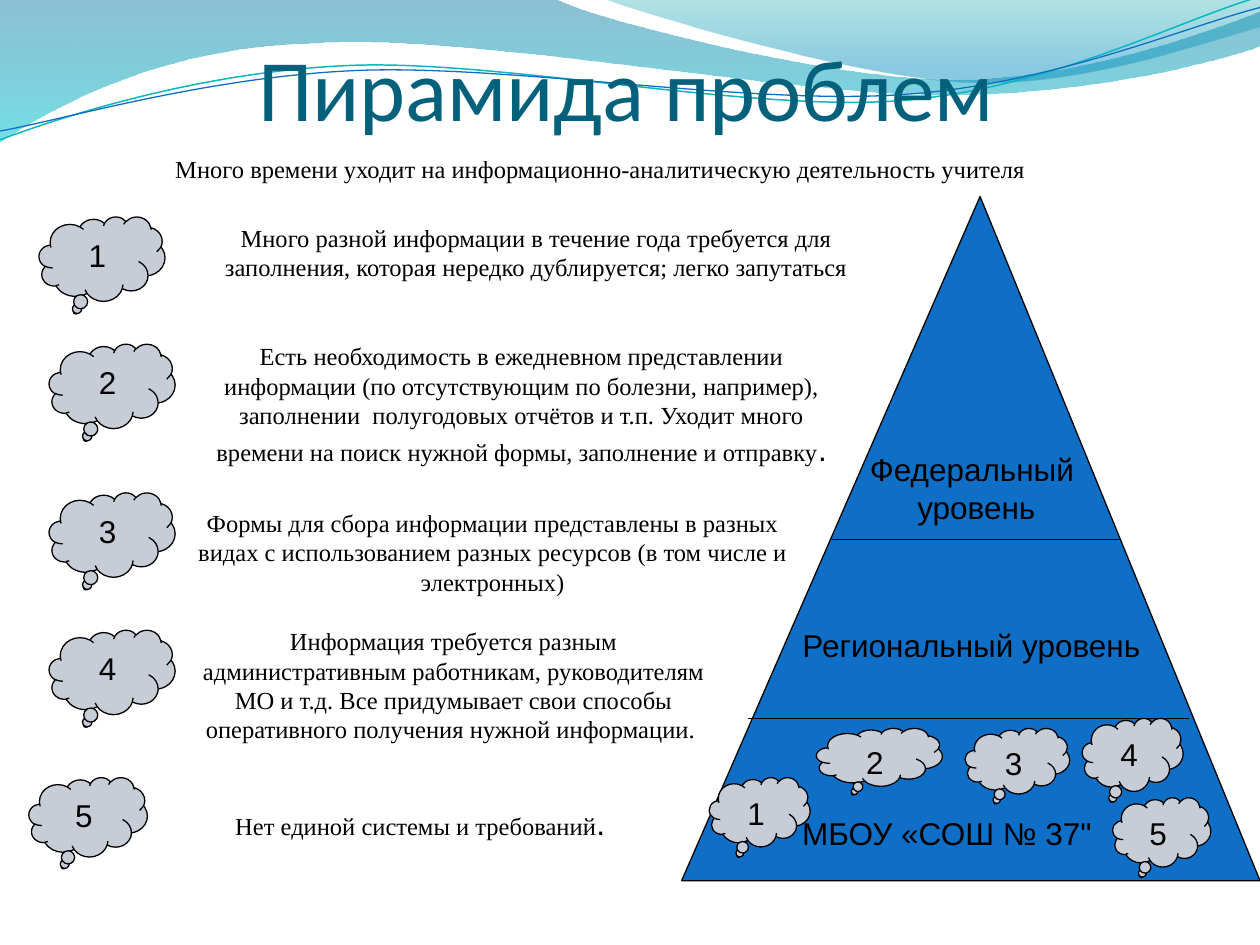
from math import cos, radians, sin

from lxml import etree
from pptx import Presentation
from pptx.dml.color import RGBColor
from pptx.enum.shapes import MSO_CONNECTOR, MSO_SHAPE
from pptx.enum.text import MSO_ANCHOR, MSO_AUTO_SIZE, PP_ALIGN
from pptx.oxml.ns import qn
from pptx.util import Inches, Pt

CLOUD = MSO_SHAPE.CLOUD_CALLOUT
PEAK = MSO_SHAPE.ISOSCELES_TRIANGLE
LINE = MSO_CONNECTOR.STRAIGHT
TOP, BOTTOM = MSO_ANCHOR.TOP, MSO_ANCHOR.BOTTOM
GROW, FIXED = MSO_AUTO_SIZE.SHAPE_TO_FIT_TEXT, MSO_AUTO_SIZE.NONE
CENTER = PP_ALIGN.CENTER

COLORS = {
    "text": "000000", "title": "04617B", "blue": "0F6FC6", "cloud": "C7CDD7",
    "teal": "0AB8BF", "deep": "0074A1", "aqua": "00C6CF",
    "sea": "00A1A9", "sky": "008BBF",
}
LABEL = {"size": Pt(18), "name": "Arial"}
NOTE = {"size": Pt(14), "name": "Times New Roman"}
HEAD = {"size": Pt(50), "name": "Calibri"}
TILT = 2.7

WAVES = [
    ([(0, 0), (4.4, -0.01), (4.76, 0.17, 6.64, 0.63, 7.58, 0.63),
      (8.53, 0.63, 9.58, 0.26, 10, 0.09), (10.01, 0.36),
      (9.83, 0.44, 8.7, 0.76, 7.46, 0.75), (6.22, 0.75, 3.82, 0.28, 2.57, 0.34),
      (1.29, 0.36, 0.46, 0.83, -0.01, 1.13), (0, 0)],
     [(0, "deep", 45), (1, "aqua", 55)]),
    ([(4.79, -0.01), (5.09, 0.11, 6.82, 0.62, 7.69, 0.65),
      (8.56, 0.69, 9.61, 0.32, 10, 0.21), (10, 0), (4.79, -0.01)],
     [(0, "sea", 30), (0.8, "sky", 45)]),
]
CURVES = [
    ([(0, 1.11), (0.48, 0.93, 1.58, 0.57, 2.77, 0.52),
      (3.95, 0.47, 5.93, 0.89, 7.13, 0.8), (8.33, 0.71, 9.38, 0.15, 9.98, -0.02)],
     (4.99, 0.57), "teal", 0.85),
    ([(0, 1.04), (0.47, 0.96, 1.64, 0.61, 2.83, 0.56),
      (4.03, 0.51, 5.97, 0.84, 7.17, 0.75), (8.36, 0.67, 9.41, 0.21, 10, 0.06)],
     (5, 0.59), "blue", 0.75),
]
LEVELS = [
    ((5.31, 6.41, 4.41, 0.4), ["МБОУ «СОШ № 37\""]),
    ((5.94, 4.92, 3.54, 0.4), ["Региональный уровень"]),
    ((5.63, 3.52, 4.17, 0.71), ["Федеральный", " уровень"]),
]
RULES = [(5.94, 9.44, 5.7), (6.6, 8.89, 4.28)]
KEYS = [(0.31, 1.72, 1, 0.67), (0.39, 2.73, 1, 0.67), (0.39, 3.91, 1, 0.67),
        (0.39, 5, 1, 0.67), (0.23, 6.17, 0.94, 0.63)]
MARKS = [(5.63, 6.17, 0.8, 0.55), (6.48, 5.78, 1, 0.46), (7.66, 5.78, 0.83, 0.52),
         (8.59, 5.7, 0.8, 0.58), (8.83, 6.33, 0.78, 0.55)]
NOTES = [
    ((1.25, 1.17, 7.03, 0.34),
     "Много времени уходит на информационно-аналитическую деятельность учителя", ""),
    ((1.48, 1.72, 5.55, 0.57),
     "Много разной информации в течение года требуется для заполнения, "
     "которая нередко дублируется; легко запутаться", ""),
    ((1.56, 2.66, 5.16, 1.11),
     "Есть необходимость в ежедневном представлении информации (по отсутствующим "
     "по болезни, например), заполнении  полугодовых отчётов и т.п. Уходит много "
     "времени на поиск нужной формы, заполнение и отправку", "."),
    ((1.41, 3.98, 5, 0.81),
     "Формы для сбора информации представлены в разных видах с использованием "
     "разных ресурсов (в том числе и электронных)", ""),
    ((1.41, 4.92, 4.38, 1.04),
     "Информация требуется разным административным работникам, руководителям МО "
     "и т.д. Все придумывает свои способы оперативного получения нужной "
     "информации. ", ""),
    ((1.48, 6.33, 3.71, 0.4), "Нет единой системы и требований", "."),
]


def tint(key):
    return RGBColor.from_string(COLORS[key])


def apply(item, values):
    for name, value in values.items():
        setattr(item, name, value)


def stroke(shape, key="text", width=0.75):
    shape.line.color.rgb = tint(key)
    shape.line.width = Pt(width)


def write(frame, lines, color="text"):
    for index, runs in enumerate(lines):
        para = frame.paragraphs[0] if index == 0 else frame.add_paragraph()
        para.alignment = CENTER
        for text, style in runs:
            run = para.add_run()
            run.text = text
            apply(run.font, style)
            run.font.color.rgb = tint(color)


def add_text(slide, box, lines, color="text", **values):
    frame = slide.shapes.add_textbox(*map(Inches, box)).text_frame
    apply(frame, {"word_wrap": True, "auto_size": GROW, **values})
    write(frame, lines, color)


def add_solid(slide, kind, box, key):
    shape = slide.shapes.add_shape(kind, *map(Inches, box))
    shape.shadow.inherit = False
    shape.fill.solid()
    shape.fill.fore_color.rgb = tint(key)
    stroke(shape)
    return shape


def add_cloud(slide, box, number):
    frame = add_solid(slide, CLOUD, box, "cloud").text_frame
    apply(frame, {"word_wrap": True, "vertical_anchor": TOP})
    write(frame, [[(str(number), LABEL)]])


def add_rule(slide, left, right, y):
    line = slide.shapes.add_connector(LINE, *map(Inches, (left, y, right, y)))
    stroke(line)
    etree.SubElement(line._element.spPr, qn("a:effectLst"))


def pairs(part):
    return list(zip(part[::2], part[1::2]))


def turn(route, center, angle):
    cx, cy = center
    c, s = cos(radians(angle)), sin(radians(angle))
    return [[value for x, y in pairs(part)
             for value in (cx + (x - cx) * c - (y - cy) * s,
                           cy + (x - cx) * s + (y - cy) * c)]
            for part in route]


def add_free(slide, route, close):
    ends = [tuple(map(Inches, part[-2:])) for part in route]
    pen = slide.shapes.build_freeform(*ends[0])
    pen.add_line_segments(ends[1:], close=close)
    shape = pen.convert_to_shape()
    shape.shadow.inherit = False
    for step, part in zip(list(shape._element.iter(qn("a:lnTo"))), route[1:]):
        if len(part) == 6:
            step.tag_name = None
            bend = etree.Element(qn("a:cubicBezTo"))
            for x, y in pairs(part):
                etree.SubElement(bend, qn("a:pt"), x=str(Inches(x) - shape.left),
                                 y=str(Inches(y) - shape.top))
            step.getparent().replace(step, bend)
    return shape


def add_wave(slide, route, stops):
    shape = add_free(slide, route, True)
    shape.line.fill.background()
    shape.fill.gradient()
    shape.fill.gradient_angle = 270
    for stop, (place, key, _) in zip(shape.fill.gradient_stops, stops):
        stop.position = place
        stop.color.rgb = tint(key)
    hues = shape._element.spPr.iter(qn("a:srgbClr"))
    for hue, (_, _, alpha) in zip(hues, stops):
        etree.SubElement(hue, qn("a:alpha"), val=str(alpha * 1000))


def add_curve(slide, route, center, key, width):
    shape = add_free(slide, turn(route, center, TILT), False)
    shape.rotation = 360 - TILT
    shape.fill.background()
    stroke(shape, key, width)


def main():
    deck = Presentation()
    apply(deck, {"slide_width": Inches(10), "slide_height": Inches(7.5)})
    slide = deck.slides.add_slide(deck.slide_layouts[6])
    for wave in WAVES:
        add_wave(slide, *wave)
    for curve in CURVES:
        add_curve(slide, *curve)
    peak = add_solid(slide, PEAK, (5.41, 1.56, 4.59, 5.43), "blue")
    peak.adjustments[0] = 0.516
    for rule in RULES:
        add_rule(slide, *rule)
    for box, lines in LEVELS:
        add_text(slide, box, [[(line, LABEL)] for line in lines])
    for group in (KEYS, MARKS):
        for number, box in enumerate(group, 1):
            add_cloud(slide, box, number)
    for box, text, end in NOTES:
        runs = [(text, NOTE)] + ([(end, LABEL)] if end else [])
        add_text(slide, box, [runs])
    add_text(slide, (0.55, 0.16, 9, 0.94), [[("Пирамида проблем ", HEAD)]], "title",
             auto_size=FIXED, vertical_anchor=BOTTOM, margin_left=0,
             margin_top=Inches(0.05), margin_right=0, margin_bottom=0)
    deck.save("out.pptx")


if __name__ == "__main__":
    main()
